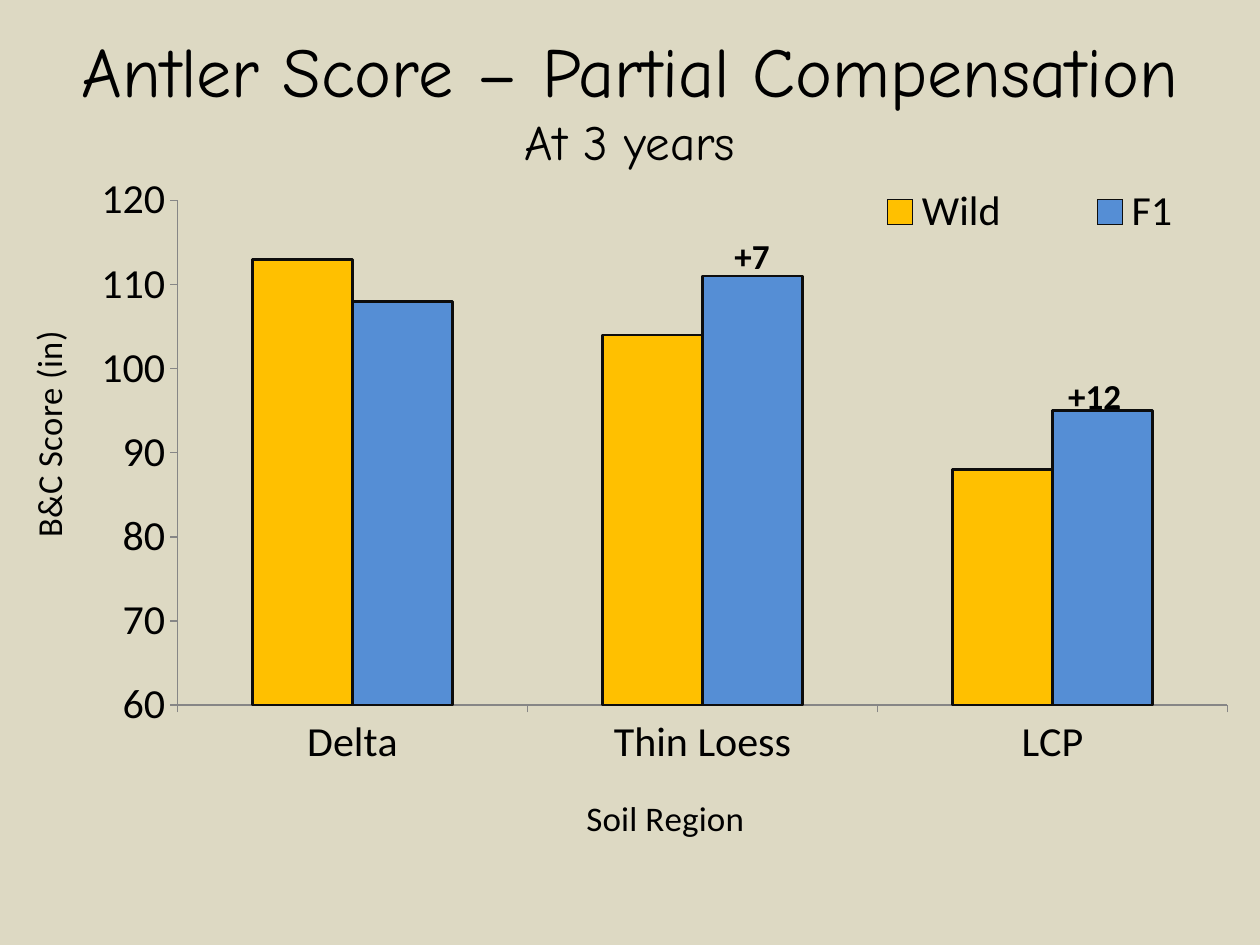
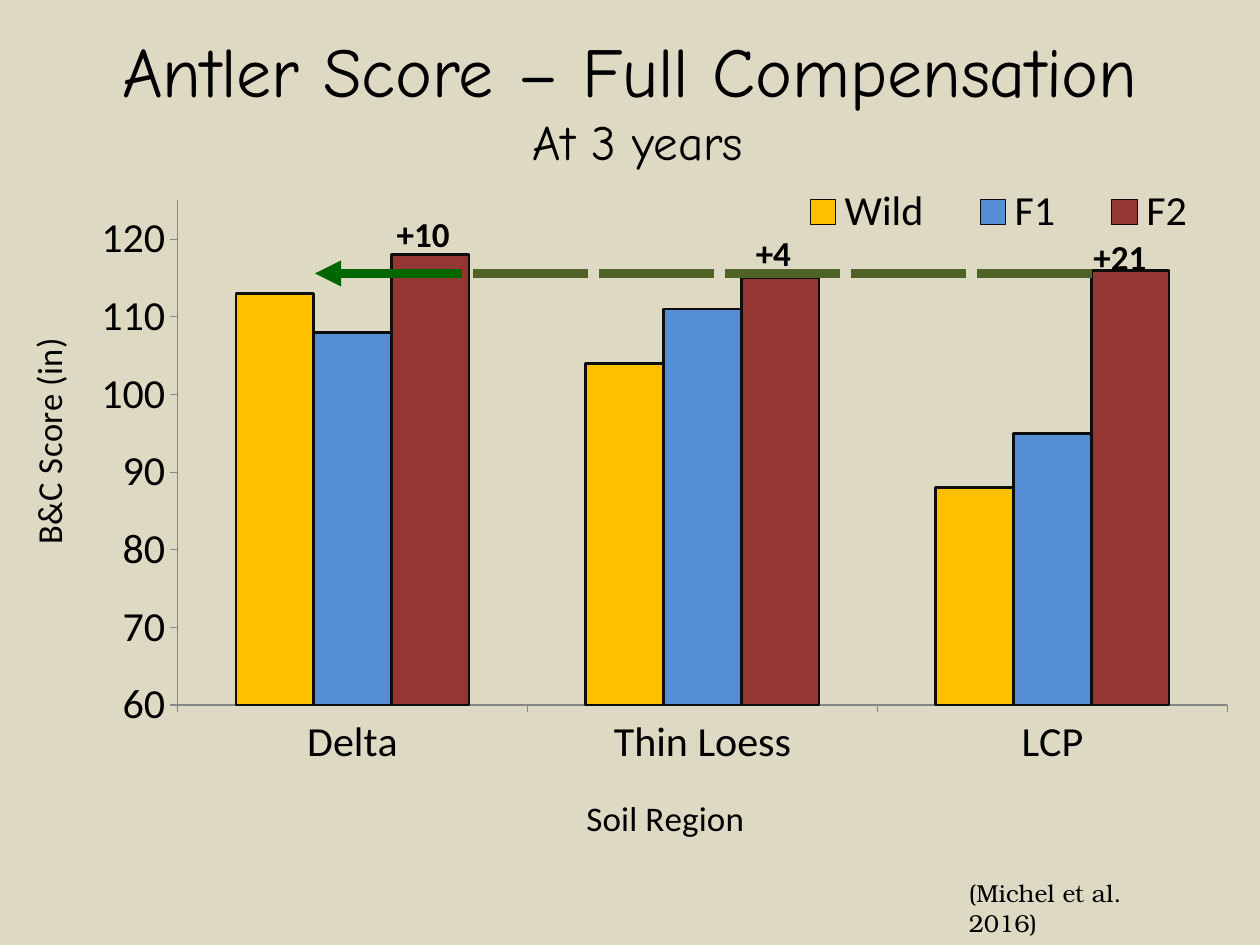
from dataclasses import dataclass

from lxml.etree import SubElement
from pptx import Presentation
from pptx.chart.axis import _BaseAxis
from pptx.chart.chart import Chart
from pptx.chart.data import CategoryChartData
from pptx.dml.color import RGBColor
from pptx.enum.chart import XL_CHART_TYPE, XL_LEGEND_POSITION, XL_TICK_MARK
from pptx.enum.shapes import MSO_CONNECTOR
from pptx.enum.text import MSO_AUTO_SIZE, PP_ALIGN
from pptx.oxml.ns import qn
from pptx.presentation import Presentation as Deck
from pptx.slide import Slide
from pptx.util import Inches, Pt

PAGE_WIDTH, PAGE_HEIGHT = Inches(10), Inches(7.5)
COLUMN, ROW = PAGE_WIDTH / 10, PAGE_HEIGHT / 7.5

SAND = RGBColor(0xDD, 0xD9, 0xC3)
BLACK = RGBColor(0, 0, 0)
OUTLINE = RGBColor(0x0D, 0x0D, 0x0D)
AXIS_GRAY = RGBColor(0x86, 0x86, 0x86)
GOLD = RGBColor(0xFF, 0xC0, 0x00)
BLUE = RGBColor(0x55, 0x8E, 0xD5)
MAROON = RGBColor(0x94, 0x36, 0x34)
ARROW_GREEN = RGBColor(0x00, 0x66, 0x00)
DASH_GREEN = RGBColor(0x4F, 0x62, 0x28)

TITLE_FONT, CHART_FONT, CITATION_FONT = "Comic Neue", "Calibri", "TeX Gyre Bonum"
REGIONS = ("Delta", "Thin Loess", "LCP")


@dataclass(frozen=True)
class Area:
    column: float
    row: float
    columns: float
    rows: float

    def lengths(self) -> tuple[int, int, int, int]:
        return (int(self.column * COLUMN), int(self.row * ROW),
                int(self.columns * COLUMN), int(self.rows * ROW))


@dataclass(frozen=True)
class Generation:
    name: str
    scores: tuple[int, ...]
    color: RGBColor


@dataclass(frozen=True)
class Gain:
    text: str
    column: float
    row: float


@dataclass(frozen=True)
class ScorePage:
    title: str
    subtitle: str
    generations: tuple[Generation, ...]
    gains: tuple[Gain, ...]
    maximum: int
    legend_left: float
    score_title_at: tuple[float, float]


TITLE_AREA = Area(0.25, 0.17, 9.5, 1.17)
CHART_AREA = Area(0.04, 1.39, 9.92, 5.36)
CITATION_AREA = Area(7.59, 6.92, 1.91, 0.34)
GUIDE_ROW = 2.17

WILD = Generation("Wild", (113, 104, 88), GOLD)
F1 = Generation("F1", (108, 111, 95), BLUE)
F2 = Generation("F2", (118, 115, 116), MAROON)

PARTIAL = ScorePage(
    "Antler Score – Partial Compensation", "At 3 years", (WILD, F1),
    (Gain("+7", 5.73, 1.81), Gain("+12", 8.38, 2.92)), 120, 0.64, (0.01, 0.23))
FULL = ScorePage(
    "Antler Score – Full Compensation", " At 3 years", (WILD, F1, F2),
    (Gain("+10", 3.05, 1.64), Gain("+4", 5.9, 1.79), Gain("+21", 8.58, 1.82)),
    125, 0.61, (0.01, 0.24))


def add_text(page: Slide, area: Area, *lines: tuple[str, float], font: str,
             bold: bool = False, align: PP_ALIGN = PP_ALIGN.LEFT,
             grow: bool = True) -> None:
    box = page.shapes.add_textbox(*area.lengths())
    frame = box.text_frame
    frame.word_wrap = True
    frame.auto_size = MSO_AUTO_SIZE.SHAPE_TO_FIT_TEXT if grow else MSO_AUTO_SIZE.NONE
    for index, (text, size) in enumerate(lines):
        para = frame.add_paragraph() if index else frame.paragraphs[0]
        para.alignment = align
        span = para.add_run()
        span.text = text
        span.font.name = font
        span.font.size = Pt(size)
        span.font.bold = bold
        span.font.color.rgb = BLACK


def add_guide(page: Slide, start: float, end: float, color: RGBColor,
              arrow: bool = False) -> None:
    row = int(GUIDE_ROW * ROW)
    guide = page.shapes.add_connector(
        MSO_CONNECTOR.STRAIGHT, int(start * COLUMN), row, int(end * COLUMN), row)
    guide.line.color.rgb = color
    guide.line.width = Pt(5)
    if arrow:
        SubElement(guide.line._get_or_add_ln(), qn("a:tailEnd"), type="triangle")
    SubElement(guide._element.spPr, qn("a:effectLst"))


def set_layout(element, left: float, top: float, width: float | None = None,
               height: float | None = None, inner: bool = False) -> None:
    layout = element.find(qn("c:layout"))
    if layout is None:
        layout = element.makeelement(qn("c:layout"))
        before = element.find(qn("c:tx"))
        if before is None:
            before = element.find(qn("c:legendPos"))
        if before is None:
            element.insert(0, layout)
        else:
            before.addnext(layout)
    for child in list(layout):
        layout.remove(child)
    manual = SubElement(layout, qn("c:manualLayout"))
    if inner:
        SubElement(manual, qn("c:layoutTarget"), val="inner")
    for mode in ("xMode", "yMode"):
        SubElement(manual, qn(f"c:{mode}"), val="edge")
    for name, value in zip("xywh", (left, top, width, height)):
        if value is not None:
            SubElement(manual, qn(f"c:{name}"), val=str(value))


def style_font(font, size: float) -> None:
    font.name = CHART_FONT
    font.size = Pt(size)
    font.bold = False
    font.color.rgb = BLACK


def style_axis(axis: _BaseAxis, title: str, title_at: tuple[float, float]) -> None:
    axis.has_major_gridlines = False
    axis.major_tick_mark = XL_TICK_MARK.OUTSIDE
    axis.minor_tick_mark = XL_TICK_MARK.NONE
    axis.format.line.color.rgb = AXIS_GRAY
    axis.format.line.width = Pt(0.75)
    style_font(axis.tick_labels.font, 24)
    frame = axis.axis_title.text_frame
    frame.text = title
    style_font(frame.paragraphs[0].runs[0].font, 20)
    set_layout(axis.axis_title._element, *title_at)


def style_legend(chart: Chart, left: float) -> None:
    chart.has_legend = True
    legend = chart.legend
    legend.position = XL_LEGEND_POSITION.RIGHT
    legend.include_in_layout = False
    style_font(legend.font, 24)
    set_layout(legend._element, left, 0.01, 0.37, 0.09)


def add_score_chart(page: Slide, content: ScorePage) -> None:
    data = CategoryChartData(number_format="0")
    data.categories = REGIONS
    for generation in content.generations:
        data.add_series(generation.name, generation.scores)
    chart = page.shapes.add_chart(
        XL_CHART_TYPE.COLUMN_CLUSTERED, *CHART_AREA.lengths(), data).chart
    chart.has_title = False
    style_font(chart.font, 10)
    plot = chart.plots[0]
    plot.gap_width = 150
    plot.overlap = 0
    plot.vary_by_categories = False
    for series, generation in zip(plot.series, content.generations):
        series.format.fill.solid()
        series.format.fill.fore_color.rgb = generation.color
        series.format.line.color.rgb = OUTLINE
        series.format.line.width = Pt(1.5)
    scores = chart.value_axis
    scores.minimum_scale = 60
    scores.maximum_scale = content.maximum
    scores.major_unit = 10
    scores.tick_labels.number_format = "0"
    scores.tick_labels.number_format_is_linked = False
    style_axis(scores, "B&C Score (in)", content.score_title_at)
    style_axis(chart.category_axis, "Soil Region", (0.46, 0.92))
    style_legend(chart, content.legend_left)
    set_layout(chart._chartSpace.chart.plotArea, 0.138, 0.038, 0.84, 0.759, inner=True)


def add_score_page(deck: Deck, content: ScorePage) -> Slide:
    page = deck.slides.add_slide(deck.slide_layouts[6])
    page.background.fill.solid()
    page.background.fill.fore_color.rgb = SAND
    add_score_chart(page, content)
    add_text(page, TITLE_AREA, (content.title, 40), (content.subtitle, 28),
             font=TITLE_FONT, align=PP_ALIGN.CENTER, grow=False)
    for gain in content.gains:
        add_text(page, Area(gain.column, gain.row, 0.93, 0.44), (gain.text, 20),
                 font=CHART_FONT, bold=True)
    return page


def main() -> None:
    deck = Presentation()
    deck.slide_width, deck.slide_height = PAGE_WIDTH, PAGE_HEIGHT
    add_score_page(deck, PARTIAL)
    full_page = add_score_page(deck, FULL)
    add_guide(full_page, 3.67, 2.5, ARROW_GREEN, arrow=True)
    for step in range(5):
        add_guide(full_page, 8.67 - step, 7.75 - step, DASH_GREEN)
    add_text(full_page, CITATION_AREA, ("(Michel et al. 2016)", 14), font=CITATION_FONT)
    deck.save("out.pptx")


if __name__ == "__main__":
    main()
